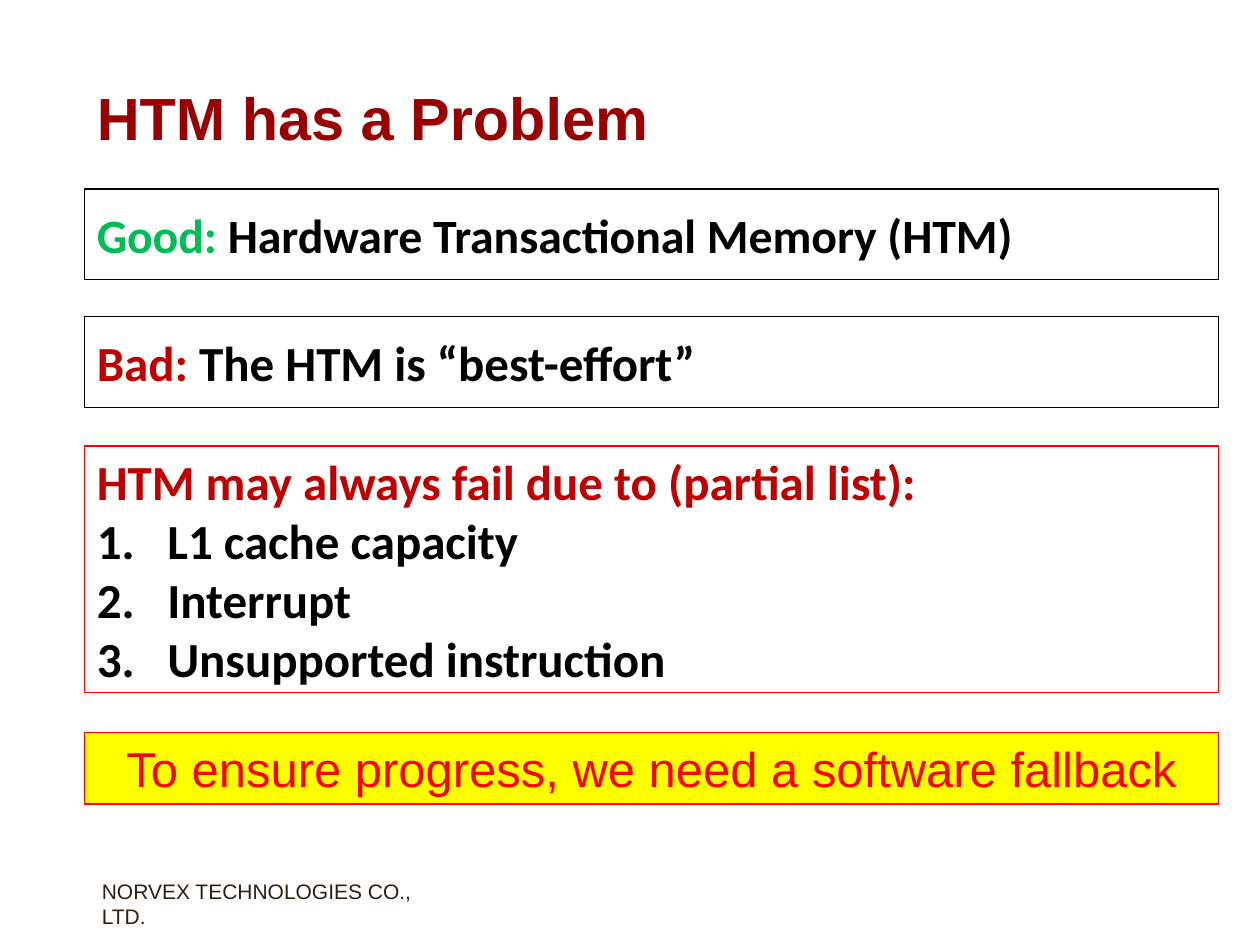
"""Build the slide on the fallback problem of hardware transactional memory."""
from dataclasses import dataclass
from typing import Optional

from lxml import etree
from pptx import Presentation
from pptx.dml.color import RGBColor
from pptx.enum.shapes import MSO_SHAPE
from pptx.enum.text import MSO_ANCHOR, PP_ALIGN
from pptx.oxml.ns import qn
from pptx.util import Inches, Pt

RECTANGLE = MSO_SHAPE.RECTANGLE
MIDDLE = MSO_ANCHOR.MIDDLE
LEFT, CENTER = PP_ALIGN.LEFT, PP_ALIGN.CENTER

WIDTH, HEIGHT = 10, 7.5
MARGIN = 0.067
BOX_WIDTH = 0.9
NUMBER_INDENT = 0.56

COLORS = {
    "title": "990000",
    "good": "00BC55",
    "bad": "C00000",
    "black": "000000",
    "red": "FF0000",
    "yellow": "FFFF00",
    "footer": "2D2015",
}


@dataclass(frozen=True)
class Line:
    """A paragraph given as (text, color) pieces."""
    pieces: tuple[tuple[str, str], ...]
    size: float = 28
    font: str = "Calibri"
    bold: bool = True
    align: PP_ALIGN = LEFT
    numbered: bool = False


@dataclass(frozen=True)
class Box:
    """A full-width framed box, with top and height as shares of the slide."""
    top: float
    height: float
    border: str
    lines: tuple[Line, ...]
    fill: Optional[str] = None


REASONS = ("L1 cache capacity", "Interrupt", "Unsupported instruction")

BOXES = (
    Box(0.2, 0.096, "black", (
        Line((("Good: ", "good"), ("Hardware Transactional Memory (HTM)", "black")), 27.3),)),
    Box(0.335, 0.096, "black", (
        Line((("Bad:", "bad"), (" The HTM is “best-effort”", "black"))),)),
    Box(0.472, 0.261, "red", (
        Line((("HTM may always fail due to (partial list):", "bad"),)),
        *(Line(((reason, "black"),), numbered=True) for reason in REASONS))),
    Box(0.775, 0.076, "red", (
        Line((("To ensure progress, we need a software fallback", "red"),),
             font="Arial", bold=False, align=CENTER),), fill="yellow"),
)


def color(name: str) -> RGBColor:
    """Look up a named color."""
    return RGBColor.from_string(COLORS[name])


def frame(left: float, top: float, width: float, height: float) -> tuple:
    """Turn shares of the slide into lengths."""
    return (Inches(left * WIDTH), Inches(top * HEIGHT),
            Inches(width * WIDTH), Inches(height * HEIGHT))


def number(paragraph) -> None:
    """Give a paragraph a hanging automatic number."""
    properties = paragraph._p.get_or_add_pPr()
    indent = Inches(NUMBER_INDENT)
    properties.set("marL", str(indent))
    properties.set("indent", str(-indent))
    etree.SubElement(properties, qn("a:buFont"), typeface="+mj-lt")
    etree.SubElement(properties, qn("a:buAutoNum"), type="arabicPeriod")


def write(text_frame, lines: tuple[Line, ...], wrap: bool = True) -> None:
    """Fill a text frame with vertically centered lines."""
    text_frame.word_wrap = wrap
    text_frame.vertical_anchor = MIDDLE
    for index, line in enumerate(lines):
        paragraph = text_frame.add_paragraph() if index else text_frame.paragraphs[0]
        paragraph.alignment = line.align
        if line.numbered:
            number(paragraph)
        paragraph.font.size = Pt(line.size)
        paragraph.font.name = line.font
        paragraph.font.bold = line.bold
        for text, name in line.pieces:
            run = paragraph.add_run()
            run.text = text
            run.font.color.rgb = color(name)


def draw_box(slide, box: Box) -> None:
    """Draw one framed box with its text."""
    shape = slide.shapes.add_shape(
        RECTANGLE, *frame(MARGIN, box.top, BOX_WIDTH, box.height))
    shape.shadow.inherit = False
    if box.fill:
        shape.fill.solid()
        shape.fill.fore_color.rgb = color(box.fill)
    else:
        shape.fill.background()
    shape.line.color.rgb = color(box.border)
    shape.line.width = Pt(0.75)
    write(shape.text_frame, box.lines)


def main() -> None:
    """Build and save the slide."""
    presentation = Presentation()
    presentation.slide_width, presentation.slide_height = Inches(WIDTH), Inches(HEIGHT)
    slide = presentation.slides.add_slide(presentation.slide_layouts[6])

    footer = slide.shapes.add_textbox(*frame(0.071, 0.937, 0.301, 0.039))
    write(footer.text_frame, (
        Line((("NORVEX TECHNOLOGIES CO., LTD.", "footer"),), 12, "Arial", False),), wrap=False)
    title = slide.shapes.add_textbox(*frame(MARGIN, 0.04, 0.825, 0.167))
    write(title.text_frame, (Line((("HTM has a Problem", "title"),), 34, "Arial"),))
    for box in BOXES:
        draw_box(slide, box)

    presentation.save("out.pptx")


if __name__ == "__main__":
    main()
